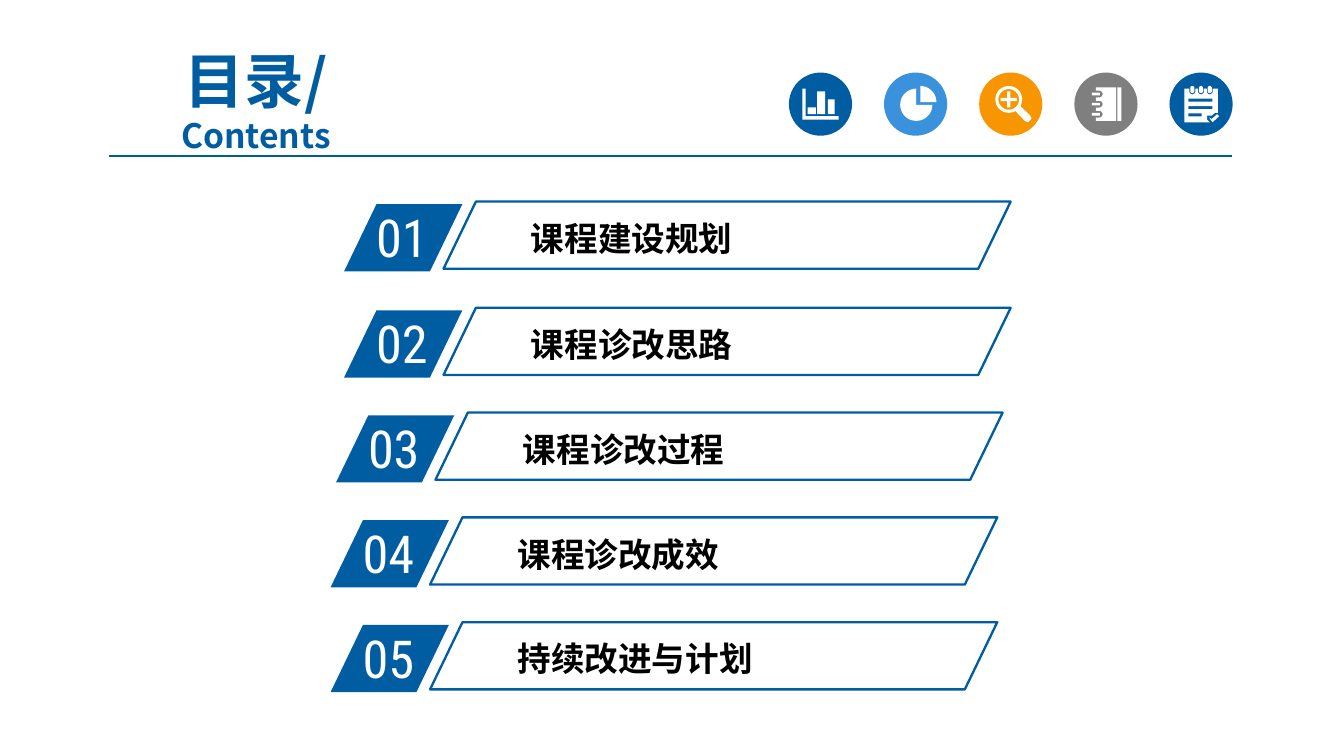
from math import cos, radians, sin

from lxml.etree import SubElement
from pptx import Presentation
from pptx.dml.color import RGBColor
from pptx.enum.shapes import MSO_CONNECTOR, MSO_SHAPE
from pptx.enum.text import MSO_ANCHOR, PP_ALIGN
from pptx.oxml.ns import qn
from pptx.util import Inches, Pt

BLUE = RGBColor(0x00, 0x5D, 0xA2)
RULE = RGBColor(0x00, 0x5B, 0x9E)
SKY = RGBColor(0x39, 0x92, 0xDB)
ORANGE = RGBColor(0xF7, 0x96, 0x00)
GREY = RGBColor(0x7F, 0x7F, 0x7F)
WHITE = RGBColor(0xFF, 0xFF, 0xFF)
BLACK = RGBColor(0x00, 0x00, 0x00)
HAN = "Noto Sans CJK SC"
DIGIT = "Roboto Condensed"
CELL = Inches(0.1)  # the 16:9 slide is 100 columns wide
ROUND = 4.7
SLANT = 0.482


def arc(x, y, r, start, end):
    """Points along an arc; degrees run clockwise from the right."""
    steps = max(8, round(abs(end - start) / 10))
    turns = [radians(start + (end - start) * i / steps) for i in range(steps + 1)]
    return [(x + r * cos(t), y + r * sin(t)) for t in turns]


def box(x, y, w, h):
    return [(x, y), (x + w, y), (x + w, y + h), (x, y + h)]


def chart():
    axis = [(1, 1.2), (1.25, 1.2), (1.25, 3.25), (3.7, 3.25), (3.7, 3.5), (1, 3.5)]
    return [axis, box(1.4, 2.6, 0.6, 0.5), box(2.1, 1.4, 0.6, 1.7),
            box(2.9, 2, 0.5, 1.1)]


def pie():
    return [[(2.7, 2.2)] + arc(2.7, 2.2, 1.2, -90, 0),
            [(2.4, 2.4)] + arc(2.4, 2.4, 1.2, 0, 270)]


def lens():
    x, y, a, b = 2.2, 2, 0.6, 0.12
    grip = [(3.8, 3.2), (3.9, 3.45), (3.65, 3.7), (3.4, 3.6)]
    plus = [(-a, -b), (-b, -b), (-b, -a), (b, -a), (b, -b), (a, -b),
            (a, b), (b, b), (b, a), (-b, a), (-b, b), (-a, b)]
    return [arc(x, y, 1, 60, 390) + grip, arc(x, y, 0.77, 0, 360),
            [(x + dx, y + dy) for dx, dy in plus]]


def book():
    rows = (3.1, 2.35, 1.6)
    body = [(1.6, 1.1), (3.1, 1.1), (3.1, 3.6), (1.6, 3.6)]
    for y in rows:
        body += [(1.6, y + 0.25), *arc(1.85, y, 0.25, 90, -90), (1.6, y - 0.25)]
    return [body, box(3.2, 1.1, 0.3, 2.5)] + [box(1.3, y - 0.1, 0.6, 0.2) for y in rows]


def pad():
    rings = (1.7, 2.35, 3)
    body = [(1.1, 1.2)]
    for x in rings:
        body += [(x - 0.22, 1.2), *arc(x, 1.4, 0.22, 180, 0), (x + 0.22, 1.2)]
    body += [(3.6, 1.2), (3.6, 3), (3.4, 3), (3.15, 3.2), (2.8, 3.2),
             (2.8, 3.5), (3, 3.7), (1.1, 3.7)]
    tick = [(2.95, 3.35), (3.15, 3.45), (3.55, 3.1), (3.7, 3.25), (3.2, 3.7)]
    pills = [arc(x, 1.15, 0.15, 180, 360) + arc(x, 1.38, 0.15, 0, 180) for x in rings]
    lines = [box(1.4, y, w, 0.22) for y, w in ((1.95, 1.8), (2.5, 1.8), (3.05, 1))]
    return [body, tick] + pills + lines


class Deck:
    """Holds the style and the current slide; lengths are grid cells."""

    def __init__(self):
        self.prs = Presentation()
        self.prs.slide_width = Inches(10)
        self.prs.slide_height = self.prs.slide_width * 9 // 16
        self.slide = self.prs.slides.add_slide(self.prs.slide_layouts[6])
        self.shapes = self.slide.shapes

    def place(self, *cells):
        return [round(c * CELL) for c in cells]

    def paint(self, shape, fill=None, line=None):
        shape.shadow.inherit = False
        if fill is None:
            shape.fill.background()
        else:
            shape.fill.solid()
            shape.fill.fore_color.rgb = fill
        if line is None:
            shape.line.fill.background()
        else:
            shape.line.color.rgb = line
            shape.line.width = Pt(1.25)

    def shape(self, kind, at, fill=None, line=None):
        item = self.shapes.add_shape(kind, *self.place(*at))
        if kind == MSO_SHAPE.PARALLELOGRAM:
            item.adjustments[0] = SLANT
        self.paint(item, fill, line)

    def text(self, at, lines, color, font=HAN, bold=True, inset=None, mid=False):
        """Each line is a pair of wording and size in points."""
        frame = self.shapes.add_textbox(*self.place(*at)).text_frame
        frame.word_wrap = True
        if inset:
            frame.margin_left = frame.margin_right = Inches(inset[0])
            frame.margin_top = frame.margin_bottom = Inches(inset[1])
        if mid:
            frame.vertical_anchor = MSO_ANCHOR.MIDDLE
        for i, (words, size) in enumerate(lines):
            para = frame.add_paragraph() if i else frame.paragraphs[0]
            if mid:
                para.alignment = PP_ALIGN.CENTER
            run = para.add_run()
            run.text = words
            run.font.name, run.font.size, run.font.bold = font, Pt(size), bold
            run.font.color.rgb = color
            SubElement(run.font._element, qn("a:ea")).set("typeface", font)

    def rule(self, x, y, end):
        line = self.shapes.add_connector(
            MSO_CONNECTOR.STRAIGHT, *self.place(x, y, end, y))
        line.line.color.rgb = RULE
        line.line.width = Pt(0.75)
        SubElement(line._element.spPr, qn("a:effectLst"))

    def icon(self, x, y, color, loops):
        self.shape(MSO_SHAPE.OVAL, (x, y, ROUND, ROUND), color)
        pen = None
        for loop in loops:
            dots = [((x + dx) * 100, (y + dy) * 100) for dx, dy in loop]
            if pen is None:
                pen = self.shapes.build_freeform(*dots[0], scale=CELL / 100)
            else:
                pen.move_to(*dots[0])
            pen.add_line_segments(dots[1:], close=True)
        self.paint(pen.convert_to_shape(), WHITE)

    def entry(self, x, y, num, label):
        self.shape(MSO_SHAPE.PARALLELOGRAM, (x, y, 8.8, 5), BLUE)
        self.text((x + 1.4, y - 0.4, 8.4, 4.9), [(num, 28)], WHITE, DIGIT, False)
        self.text((x + 13.2, y + 0.6, 30.9, 3.8), [(label, 18)], BLACK,
                  inset=(0.07, 0.04))
        self.shape(MSO_SHAPE.PARALLELOGRAM, (x + 7.4, y - 0.2, 42.2, 5), line=BLUE)


def main():
    deck = Deck()
    deck.text((6.7, 4.7, 24.7, 5.4), [("目录/", 32), ("Contents", 18)], BLUE, mid=True)
    deck.rule(8.1, 11.6, 91.7)
    icons = [(BLUE, chart), (SKY, pie), (ORANGE, lens), (GREY, book), (BLUE, pad)]
    for i, (color, draw) in enumerate(icons):
        deck.icon(58.7 + 7.08 * i, 5.4, color, draw())
    entries = [(25.6, 15.2, "课程建设规划"), (25.6, 23.1, "课程诊改思路"),
               (25, 30.9, "课程诊改过程"), (24.6, 38.7, "课程诊改成效"),
               (24.6, 46.5, "持续改进与计划")]
    for i, (x, y, label) in enumerate(entries, 1):
        deck.entry(x, y, f"{i:02}", label)
    deck.prs.save("out.pptx")


if __name__ == "__main__":
    main()
